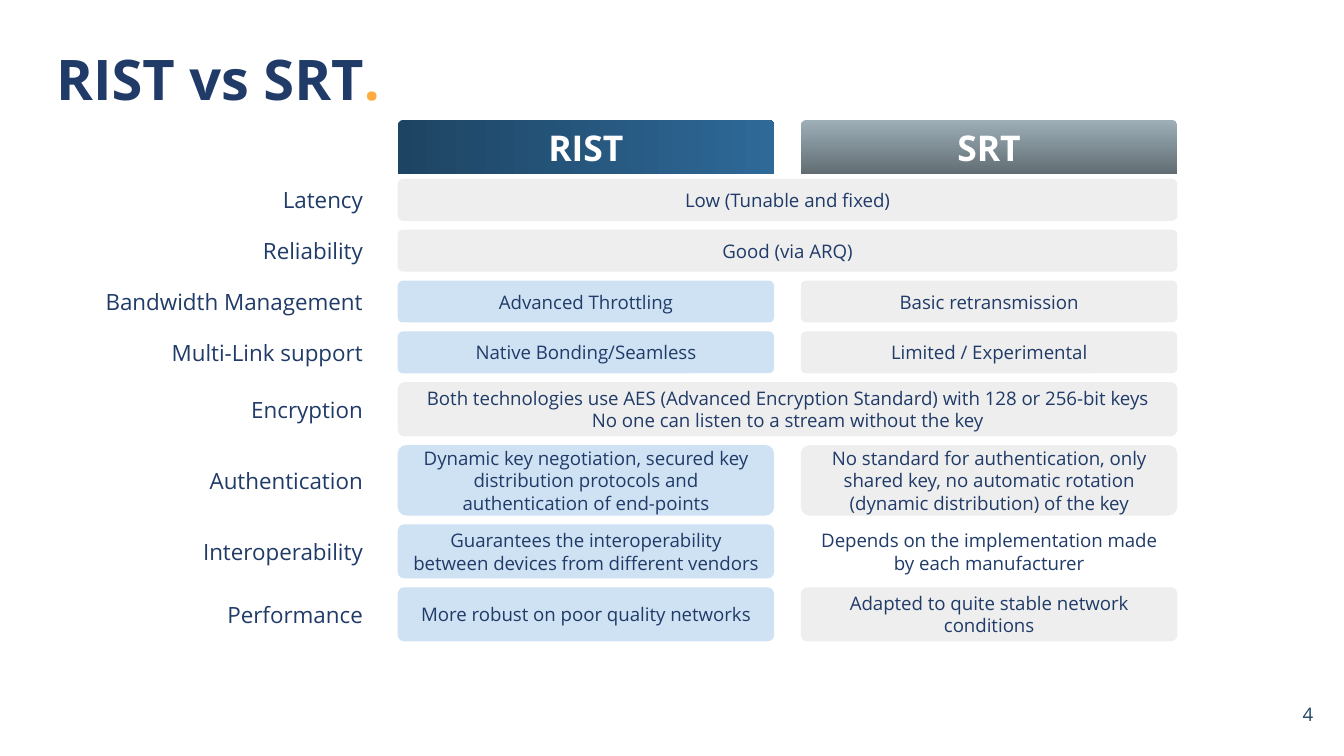
from dataclasses import dataclass
from typing import NamedTuple

from pptx import Presentation
from pptx import util as u
from pptx.dml import color
from pptx.enum import shapes, text


@dataclass(frozen=True)
class Theme:
    font: str = "Open Sans"
    ink: str = "203B68"
    accent: str = "FFAB40"
    number_ink: str = "1E4463"
    white: str = "FFFFFF"
    gray: str = "EEEEEE"
    blue: str = "CFE2F3"
    rist_gradient: tuple = ("1E4463", "2E6998")
    srt_gradient: tuple = ("9EAFB8", "616D73")
    title_size: int = 30
    header_size: int = 19
    label_size: int = 12
    cell_size: int = 10


class Box(NamedTuple):
    left: float
    top: float
    width: float
    height: float


THEME = Theme()
WIDTH = u.Inches(10)
HEIGHT = WIDTH * 9 // 16
COLUMN = WIDTH / 50
ROW = HEIGHT / 56.25

COLUMN_GAP, ROW_GAP = 1, 0.66
HEADER_ROWS, HEADER_GAP = 4.02, 0.38
LABEL_ROWS, LABEL_GAP = 2, 0.8

COMPARISON = [
    ("Latency", 8.2, 3.12, ["Low (Tunable and fixed)"]),
    ("Reliability", 8.2, 3.12, ["Good (via ARQ)"]),
    ("Bandwidth Management", 13, 3.12, ["Advanced Throttling", "Basic retransmission"]),
    ("Multi-Link support", 9.8, 3.12, ["Native Bonding/Seamless", "Limited / Experimental"]),
    ("Encryption", 8.2, 4.02, [
        "Both technologies use AES (Advanced Encryption Standard) with 128 or 256-bit keys\n"
        "No one can listen to a stream without the key"]),
    ("Authentication", 8.2, 5.24, [
        "Dynamic key negotiation, secured key distribution protocols and authentication of end-points",
        "No standard for authentication, only shared key, no automatic rotation "
        "(dynamic distribution) of the key"]),
    ("Interoperability", 8.2, 4.02, [
        "Guarantees the interoperability between devices from different vendors",
        "Depends on the implementation made by each manufacturer"]),
    ("Performance", 8.2, 4.02, [
        "More robust on poor quality networks",
        "Adapted to quite stable network conditions"]),
]


def rgb(value):
    return color.RGBColor.from_string(value)


def place(box):
    return [round(length * unit) for length, unit in zip(box, (COLUMN, ROW, COLUMN, ROW))]


def write(shape, content, size=THEME.cell_size, ink=THEME.ink, bold=False, align="CENTER",
          anchor="MIDDLE", inset=0.1, grow=False, ending=""):
    frame = shape.text_frame
    frame.word_wrap = True
    frame.auto_size = text.MSO_AUTO_SIZE.SHAPE_TO_FIT_TEXT if grow else text.MSO_AUTO_SIZE.NONE
    frame.vertical_anchor = text.MSO_ANCHOR[anchor]
    frame.margin_left = frame.margin_right = u.Inches(0.1)
    frame.margin_top = frame.margin_bottom = u.Inches(inset)
    frame.text = content
    for para in frame.paragraphs:
        para.alignment = text.PP_ALIGN[align]
        if ending:
            para.add_run().text = ending
        for span in para.runs:
            span.font.name = THEME.font
            span.font.size = u.Pt(size)
            span.font.bold = bold
            span.font.color.rgb = rgb(THEME.accent if span.text == ending else ink)


def add_panel(page, kind, box, corner):
    panel = page.shapes.add_shape(kind, *place(box))
    panel.adjustments[0] = corner
    panel.shadow.inherit = False
    panel.line.fill.background()
    return panel


def add_title(page, box):
    write(page.shapes.add_textbox(*place(box)), "RIST vs SRT", size=THEME.title_size, bold=True,
          align="LEFT", anchor="TOP", grow=True, ending=".")


def add_page_number(page, box):
    write(page.shapes.add_textbox(*place(box)), "4", ink=THEME.number_ink, align="RIGHT")


def add_header(page, box, name, gradient, angle):
    header = add_panel(page, shapes.MSO_SHAPE.ROUND_2_SAME_RECTANGLE, box, 0.1)
    header.fill.gradient()
    header.fill.gradient_angle = angle
    for position, (stop, shade) in enumerate(zip(header.fill.gradient_stops, gradient)):
        stop.position = position
        stop.color.rgb = rgb(shade)
    write(header, name, size=THEME.header_size, ink=THEME.white, bold=True)


def add_label(page, box, name):
    write(page.shapes.add_textbox(*place(box)), name, size=THEME.label_size, align="RIGHT",
          anchor="TOP", inset=0, grow=True)


def add_cell(page, box, content, shade):
    cell = add_panel(page, shapes.MSO_SHAPE.ROUNDED_RECTANGLE, box, 0.12)
    cell.fill.solid()
    cell.fill.fore_color.rgb = rgb(shade)
    write(cell, content)


def add_comparison(page, box):
    side = (box.width - COLUMN_GAP) / 2
    lefts = [box.left, box.left + side + COLUMN_GAP]
    headers = [("RIST", THEME.rist_gradient, 0), ("SRT", THEME.srt_gradient, 270)]
    for left, header in zip(lefts, headers):
        add_header(page, Box(left, box.top, side, HEADER_ROWS), *header)

    top = box.top + HEADER_ROWS + HEADER_GAP
    for name, label_width, height, contents in COMPARISON:
        label_left = box.left - LABEL_GAP - label_width
        label_top = top + (height - LABEL_ROWS) / 2
        add_label(page, Box(label_left, label_top, label_width, LABEL_ROWS), name)
        if len(contents) == 1:
            add_cell(page, Box(box.left, top, box.width, height), contents[0], THEME.gray)
        else:
            srt_shade = THEME.white if name == "Interoperability" else THEME.gray
            for left, content, shade in zip(lefts, contents, (THEME.blue, srt_shade)):
                add_cell(page, Box(left, top, side, height), content, shade)
        top += height + ROW_GAP


def main():
    deck = Presentation()
    deck.slide_width, deck.slide_height = WIDTH, HEIGHT
    page = deck.slides.add_slide(deck.slide_layouts[6])
    add_page_number(page, Box(46.35, 51, 3, 4.3))
    add_title(page, Box(1.6, 2.3, 33.65, 7.1))
    add_comparison(page, Box(14.8, 8.92, 29, 38.8))
    deck.save("out.pptx")


if __name__ == "__main__":
    main()
